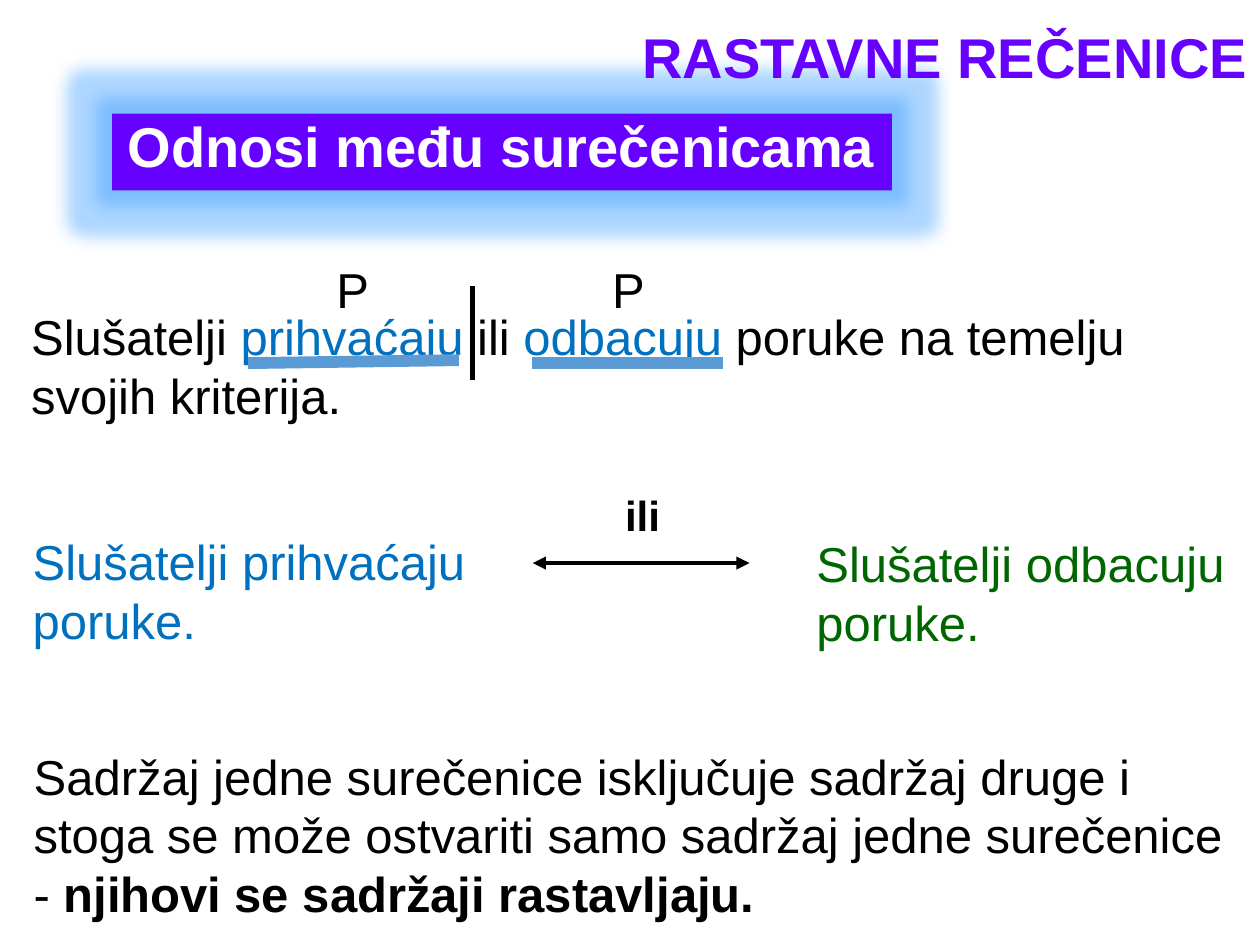
from dataclasses import dataclass

from lxml import etree
from pptx import Presentation
from pptx import util as u
from pptx.dml.color import RGBColor
from pptx.enum import shapes, text
from pptx.oxml import ns


@dataclass(frozen=True)
class Theme:
    font: str = "Arial"
    violet: str = "6600FF"
    white: str = "FFFFFF"
    black: str = "000000"
    blue: str = "0070C0"
    green: str = "006600"
    underline: str = "5B9BD5"
    glow: str = "3399FF"
    heading: int = 32
    body: int = 28
    label: int = 24


THEME = Theme()


def add_child(parent, tag, **attributes):
    return etree.SubElement(parent, ns.qn(tag), attributes)


def set_all(target, values):
    for name, value in values.items():
        setattr(target, name, value)


def add_text(page, place, spans, size=THEME.body, anchor=text.MSO_ANCHOR.TOP,
             inset=(0.25, 0.13), **para_format):
    """Add one paragraph; each span is (words, colour, bold)."""
    box = page.shapes.add_textbox(*map(u.Cm, place))
    side, edge = map(u.Cm, inset)
    set_all(box.text_frame, {
        "word_wrap": True, "vertical_anchor": anchor,
        "margin_left": side, "margin_right": side,
        "margin_top": edge, "margin_bottom": edge})
    para = box.text_frame.paragraphs[0]
    set_all(para, para_format)
    for words, colour, bold in spans:
        span = para.add_run()
        span.text = words
        set_all(span.font, {"name": THEME.font, "size": u.Pt(size), "bold": bold})
        span.font.color.rgb = RGBColor.from_string(colour)


def add_line(page, ends, colour, width, arrows=False):
    line = page.shapes.add_connector(shapes.MSO_CONNECTOR.STRAIGHT, *map(u.Cm, ends))
    line.line.color.rgb = RGBColor.from_string(colour)
    line.line.width = u.Pt(width)
    if arrows:
        for tag in ("a:headEnd", "a:tailEnd"):
            add_child(line.line._get_or_add_ln(), tag, type="triangle")
    add_child(line._element.spPr, "a:effectLst")


def add_glowing_band(page, place, colour, radius):
    band = page.shapes.add_shape(shapes.MSO_SHAPE.RECTANGLE, *map(u.Cm, place))
    band.fill.solid()
    band.fill.fore_color.rgb = RGBColor.from_string(colour)
    band.line.fill.background()
    band.shadow.inherit = False
    effects = band._element.spPr.find(ns.qn("a:effectLst"))
    glow = add_child(effects, "a:glow", rad=str(u.Pt(radius)))
    tint = add_child(glow, "a:srgbClr", val=THEME.glow)
    add_child(tint, "a:alpha", val="40000")


def main():
    deck = Presentation()
    set_all(deck, {"slide_width": u.Cm(25.4), "slide_height": u.Cm(19.05)})
    page = deck.slides.add_slide(deck.slide_layouts[6])

    # Headings
    add_glowing_band(page, (2.26, 2.29, 15.72, 1.55), THEME.violet, 18)
    add_text(page, (2.39, 1.57, 15.6, 2.13),
             [("Odnosi među surečenicama", THEME.white, True)], THEME.heading,
             text.MSO_ANCHOR.BOTTOM, (0.18, 0.1), space_before=u.Pt(10))
    add_text(page, (3.35, 0.03, 22.05, 1.93),
             [("RASTAVNE REČENICE", THEME.violet, True)], THEME.heading,
             text.MSO_ANCHOR.BOTTOM, alignment=text.PP_ALIGN.RIGHT, line_spacing=0.9)

    # The two clauses and the choice between them
    add_text(page, (0.41, 10.59, 11, 3),
             [("Slušatelji prihvaćaju poruke.", THEME.blue, False)])
    add_text(page, (5.13, 9.73, 15.65, 1.52), [("ili", THEME.black, True)],
             THEME.label, alignment=text.PP_ALIGN.CENTER)
    add_line(page, (10.74, 11.35, 15.11, 11.35), THEME.black, 2.5, arrows=True)
    add_text(page, (16.21, 10.62, 8.81, 3),
             [("Slušatelji odbacuju poruke.", THEME.green, False)])

    # Conclusion
    add_text(page, (0.43, 14.91, 24.56, 1.63), [
        ("Sadržaj jedne surečenice isključuje sadržaj druge i stoga se može "
         "ostvariti samo sadržaj jedne surečenice - ", THEME.black, False),
        ("njihovi se sadržaji rastavljaju.", THEME.black, True)])

    # Example sentence with marked predicates
    add_text(page, (0.38, 6.05, 24.54, 3), [
        ("Slušatelji ", THEME.black, False),
        ("prihvaćaju", THEME.blue, False),
        (" ili ", THEME.black, False),
        ("odbacuju", THEME.blue, False),
        (" poruke na temelju svojih kriterija.", THEME.black, False)])
    predicates = [(6.53, (5, 7.32, 9.25, 7.26)), (12.09, (10.72, 7.32, 14.58, 7.32))]
    for left, underline in predicates:
        add_text(page, (left, 5.11, 1.57, 1.65), [("P", THEME.black, False)])
        add_line(page, underline, THEME.underline, 6.75)

    # Clause boundary
    add_line(page, (9.53, 5.77, 9.53, 7.67), THEME.black, 3)

    deck.save("out.pptx")


if __name__ == "__main__":
    main()
